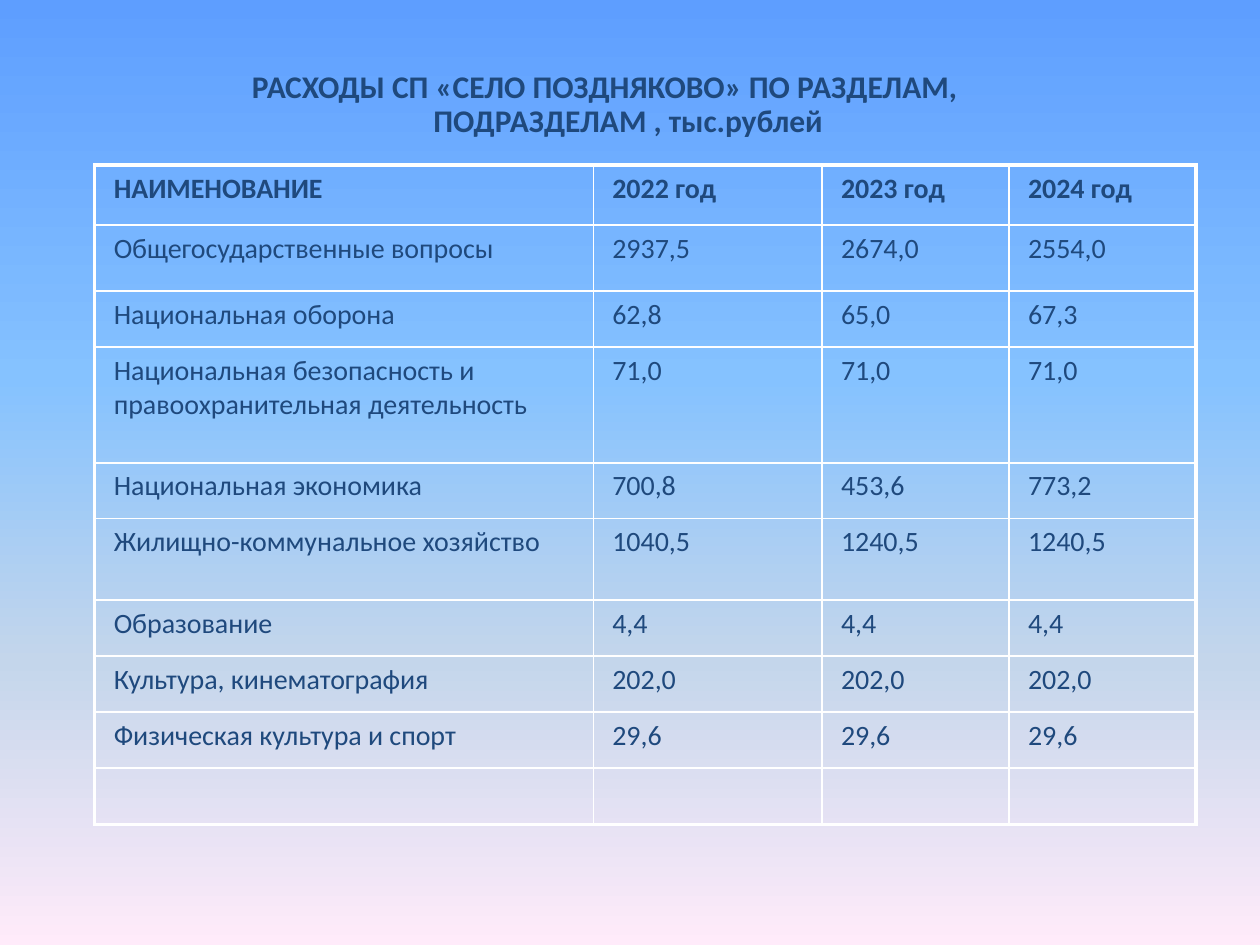
import dataclasses

import pptx
import pptx.dml.color
import pptx.enum.text
import pptx.oxml
import pptx.oxml.ns
import pptx.util
from pptx.util import Cm


@dataclasses.dataclass(frozen=True)
class Theme:
    """Hold the colours, font and sizes in points."""

    font: str = "Calibri"
    ink: str = "1F497D"
    line: str = "FFFFFF"
    title: int = 18
    body: int = 16
    outer: float = 2.25
    inner: float = 1
    sky: tuple = ((0, "5E9EFF"), (40, "85C2FF"), (70, "C4D6EB"), (100, "FFEBFA"))


THEME = Theme()
TITLE = "РАСХОДЫ СП «СЕЛО ПОЗДНЯКОВО» ПО РАЗДЕЛАМ, ПОДРАЗДЕЛАМ , тыс.рублей"
COLS = (10.05, 4.61, 3.77, 3.77)
ROWS = (
    (1.21, "НАИМЕНОВАНИЕ", "2022 год", "2023 год", "2024 год"),
    (1.33, "Общегосударственные вопросы", "2937,5", "2674,0", "2554,0"),
    (1.13, "Национальная оборона", "62,8", "65,0", "67,3"),
    (2.33, "Национальная безопасность и правоохранительная деятельность",
     "71,0", "71,0", "71,0"),
    (1.12, "Национальная экономика", "700,8", "453,6", "773,2"),
    (1.65, "Жилищно-коммунальное хозяйство", "1040,5", "1240,5", "1240,5"),
    (1.13, "Образование", "4,4", "4,4", "4,4"),
    (1.13, "Культура, кинематография", "202,0", "202,0", "202,0"),
    (1.13, "Физическая культура и спорт", "29,6", "29,6", "29,6"),
    (1.13, "", "", "", ""),
)


def add_node(root, tag, **attrs):
    """Append a drawing element with its attributes."""
    node = pptx.oxml.ns.qn(tag)
    child = root.makeelement(node, {key: str(val) for key, val in attrs.items()})
    root.append(child)
    return child


def paint_sky(slide):
    """Fill the background with the vertical gradient."""
    fill = slide.background.fill
    fill.gradient()
    fill.gradient_angle = 270
    stops = next(slide.element.iter(pptx.oxml.ns.qn("a:gsLst")))
    for stop in list(stops):
        stops.remove(stop)
    for pos, color in THEME.sky:
        stop = add_node(stops, "a:gs", pos=pos * 1000)
        add_node(stop, "a:srgbClr", val=color)


def write_text(frame, text, size, bold, left, indent):
    """Write one styled paragraph with its indents."""
    para = frame.paragraphs[0]
    para.text = text
    para.space_before = pptx.util.Pt(size * 0.2)
    font = para.font
    font.name, font.size, font.bold = THEME.font, pptx.util.Pt(size), bold
    font.color.rgb = pptx.dml.color.RGBColor.from_string(THEME.ink)
    props = para._p.get_or_add_pPr()
    props.set("marL", str(Cm(left)))
    props.set("indent", str(Cm(indent)))
    return para


def add_title(slide):
    """Add the centred heading."""
    box = slide.shapes.add_textbox(Cm(3.3), Cm(1.32), Cm(17.78), Cm(2.21))
    box.text_frame.word_wrap = True
    para = write_text(box.text_frame, TITLE, THEME.title, True, 0.95, -0.95)
    para.alignment = pptx.enum.text.PP_ALIGN.CENTER
    para.line_spacing = 0.9


def style_cell(cell, edges):
    """Clear the cell fill and draw its four borders."""
    props = cell._tc.get_or_add_tcPr()
    for side, outer in zip("LRTB", edges):
        width = pptx.util.Pt(THEME.outer if outer else THEME.inner)
        line = add_node(props, f"a:ln{side}", w=width)
        add_node(add_node(line, "a:solidFill"), "a:srgbClr", val=THEME.line)
    cell.fill.background()


def add_grid(slide):
    """Add the table of spending by section."""
    high, wide = len(ROWS), len(COLS)
    total = sum(row[0] for row in ROWS)
    frame = slide.shapes.add_table(
        high, wide, Cm(1.91), Cm(3.33), Cm(sum(COLS)), Cm(total))
    table = frame.table
    table.first_row = table.horz_banding = False
    for col, width in zip(table.columns, COLS):
        col.width = Cm(width)
    for i, (height, *texts) in enumerate(ROWS):
        table.rows[i].height = Cm(height)
        for j, text in enumerate(texts):
            cell = table.cell(i, j)
            if text:
                write_text(cell.text_frame, text, THEME.body, i == 0, 0.13, 0)
            style_cell(cell, (j == 0, j == wide - 1, i == 0, i == high - 1))


def main():
    """Build and save the slide."""
    deck = pptx.Presentation()
    deck.slide_width, deck.slide_height = Cm(25.4), Cm(19.05)
    slide = deck.slides.add_slide(deck.slide_layouts[6])
    paint_sky(slide)
    add_title(slide)
    add_grid(slide)
    deck.save("out.pptx")


if __name__ == "__main__":
    main()
